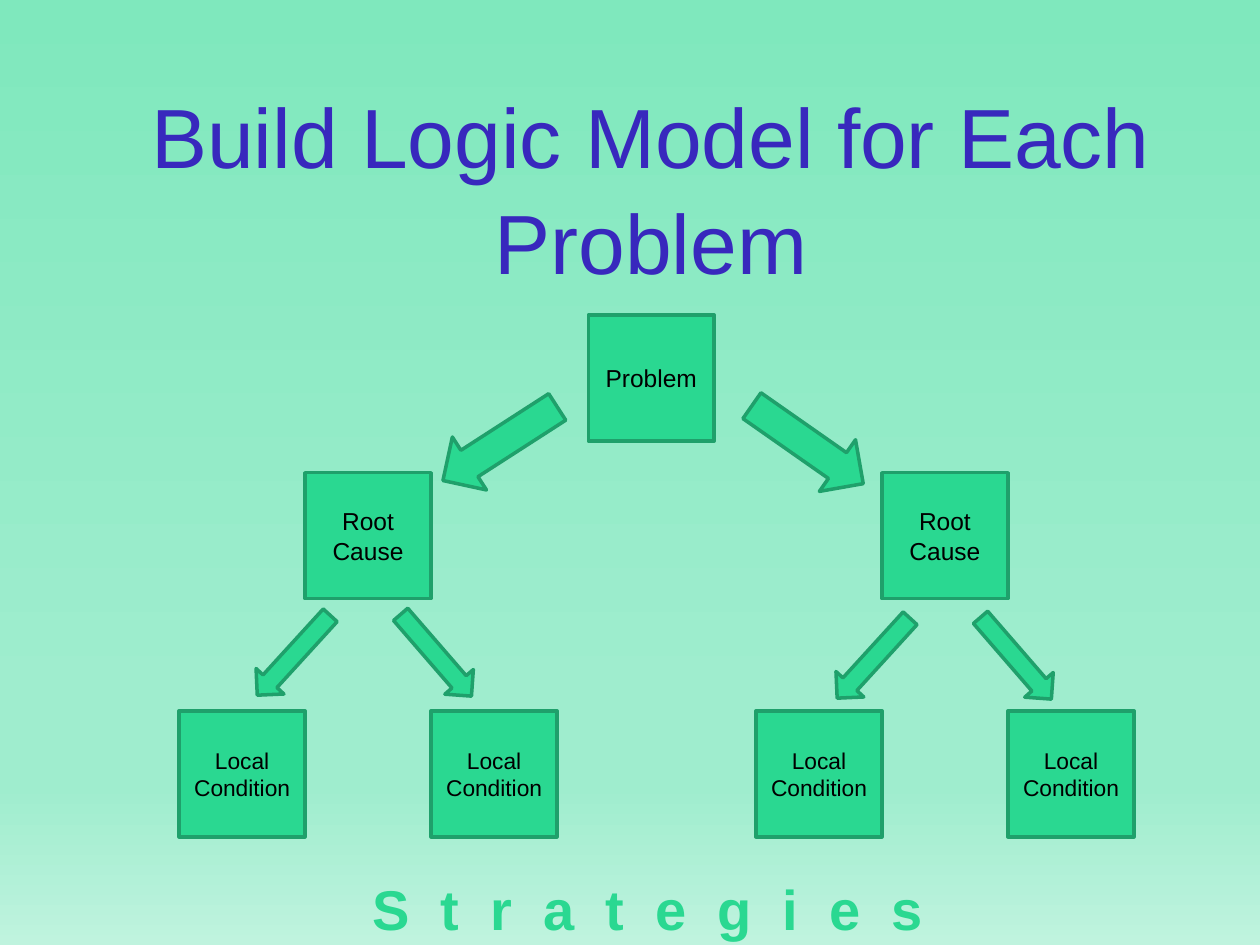
from copy import deepcopy
from dataclasses import dataclass

from pptx import Presentation
from pptx.dml.color import RGBColor
from pptx.enum.shapes import MSO_SHAPE
from pptx.enum.text import MSO_ANCHOR, MSO_AUTO_SIZE, PP_ALIGN
from pptx.oxml.ns import qn
from pptx.util import Cm, Pt


@dataclass(frozen=True)
class Theme:
    font: str = "Arial"
    title_color: str = "3828BD"
    accent: str = "2AD891"
    outline: str = "1FA06B"
    ink: str = "000000"
    backdrop: tuple = ((0, "7FE8BD"), (0.74, "9FEDCE"),
                       (0.83, "9FEDCE"), (1, "BFF3DE"))
    title_size: int = 48
    footer_size: int = 32
    node_size: int = 14
    leaf_size: int = 13
    line_width: int = 2


THEME = Theme()
NODE = 2.54  # side of every square node, cm


def style_text(frame, size, color, align=PP_ALIGN.CENTER, bold=False):
    for para in frame.paragraphs:
        para.alignment = align
        for span in para.runs:
            span.font.name = THEME.font
            span.font.size = Pt(size)
            span.font.bold = bold
            span.font.color.rgb = RGBColor.from_string(color)


def paint_background(page):
    fill = page.background.fill
    fill.gradient()
    fill.gradient_angle = 270
    stop_list = page.element.find(".//" + qn("a:gsLst"))
    while len(stop_list) < len(THEME.backdrop):
        stop_list.append(deepcopy(stop_list[-1]))
    for stop, (position, color) in zip(fill.gradient_stops, THEME.backdrop):
        stop.position = position
        stop.color.rgb = RGBColor.from_string(color)


def add_title(page, text, left, top, width, height):
    title = page.shapes.title
    title.left, title.top = Cm(left), Cm(top)
    title.width, title.height = Cm(width), Cm(height)
    frame = title.text_frame
    frame.text = text
    frame.word_wrap = True
    frame.auto_size = MSO_AUTO_SIZE.NONE
    frame.vertical_anchor = MSO_ANCHOR.TOP
    frame.paragraphs[0].line_spacing = 1.05
    style_text(frame, THEME.title_size, THEME.title_color)


def add_green_shape(page, kind, left, top, width, height):
    shape = page.shapes.add_shape(kind, Cm(left), Cm(top), Cm(width), Cm(height))
    shape.shadow.inherit = False
    shape.fill.solid()
    shape.fill.fore_color.rgb = RGBColor.from_string(THEME.accent)
    shape.line.color.rgb = RGBColor.from_string(THEME.outline)
    shape.line.width = Pt(THEME.line_width)
    return shape


def add_node(page, text, left, top, size=THEME.node_size):
    node = add_green_shape(page, MSO_SHAPE.RECTANGLE, left, top, NODE, NODE)
    frame = node.text_frame
    frame.text = text
    frame.word_wrap = True
    frame.vertical_anchor = MSO_ANCHOR.MIDDLE
    style_text(frame, size, THEME.ink)


def add_arrow(page, left, top, width, height, angle):
    arrow = add_green_shape(page, MSO_SHAPE.RIGHT_ARROW, left, top, width, height)
    arrow.rotation = angle


def add_problem(page, left, top):
    """Place the root node and the two arrows that leave it."""
    add_node(page, "Problem", left, top)
    for shift, drop, angle in ((-3.15, 1.96, 147.2), (3.05, 1.98, 35)):
        add_arrow(page, left + shift, top + drop, 2.74, 1.27, angle)


def add_cause_branch(page, left, top, nudge=0):
    """Place a root cause above its two local conditions; nudge moves the arrows."""
    cause_left = left + NODE
    add_node(page, "Root Cause", cause_left, top)
    for side, shift, angle in ((-1, -1.32, 132.4), (1, 1.55, 49.1)):
        add_node(page, "Local Condition", cause_left + side * NODE, top + 4.8,
                 THEME.leaf_size)
        add_arrow(page, cause_left + shift + nudge, top + 3.3 + nudge,
                  2.18, 0.76, angle)


def add_footer(page, text, left, top, width, height):
    box = page.shapes.add_textbox(Cm(left), Cm(top), Cm(width), Cm(height))
    frame = box.text_frame
    frame.text = text
    frame.word_wrap = False
    frame.auto_size = MSO_AUTO_SIZE.SHAPE_TO_FIT_TEXT
    style_text(frame, THEME.footer_size, THEME.accent, PP_ALIGN.LEFT, bold=True)
    # Letter spacing, in hundredths of a point
    frame.paragraphs[0].runs[0].font._element.set("spc", "445")


def main():
    deck = Presentation()
    deck.slide_width, deck.slide_height = Cm(25.4), Cm(19.05)
    page = deck.slides.add_slide(deck.slide_layouts[5])
    paint_background(page)
    add_title(page, "Build Logic Model for Each Problem", 2.11, 1.47, 22.02, 2.77)
    add_problem(page, 11.86, 6.35)
    add_cause_branch(page, 3.61, 9.53)
    add_cause_branch(page, 15.24, 9.53, nudge=0.06)
    add_footer(page, "S t r a t e g i e s", 7.26, 17.5, 11.71, 1.63)
    deck.save("out.pptx")


if __name__ == "__main__":
    main()
